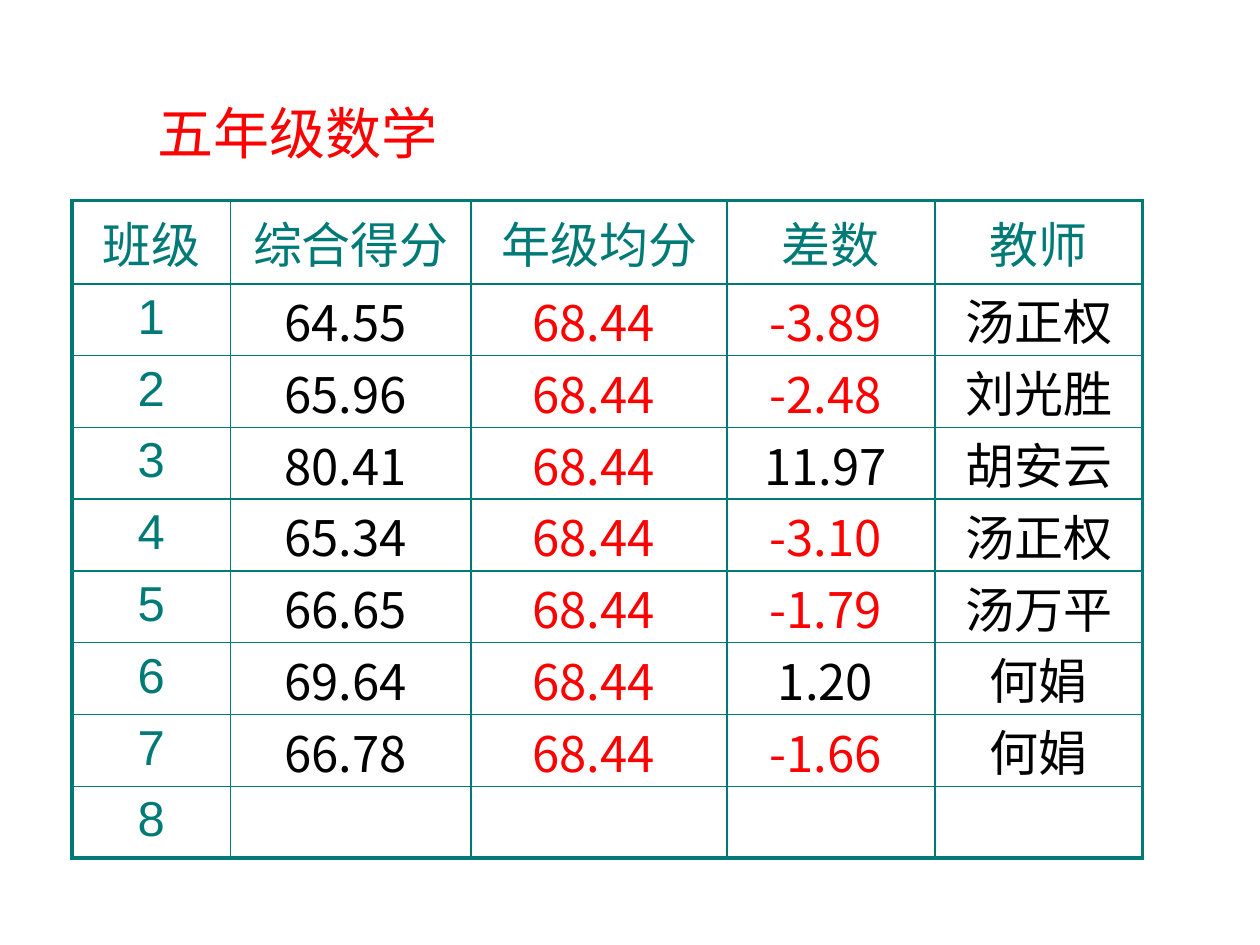
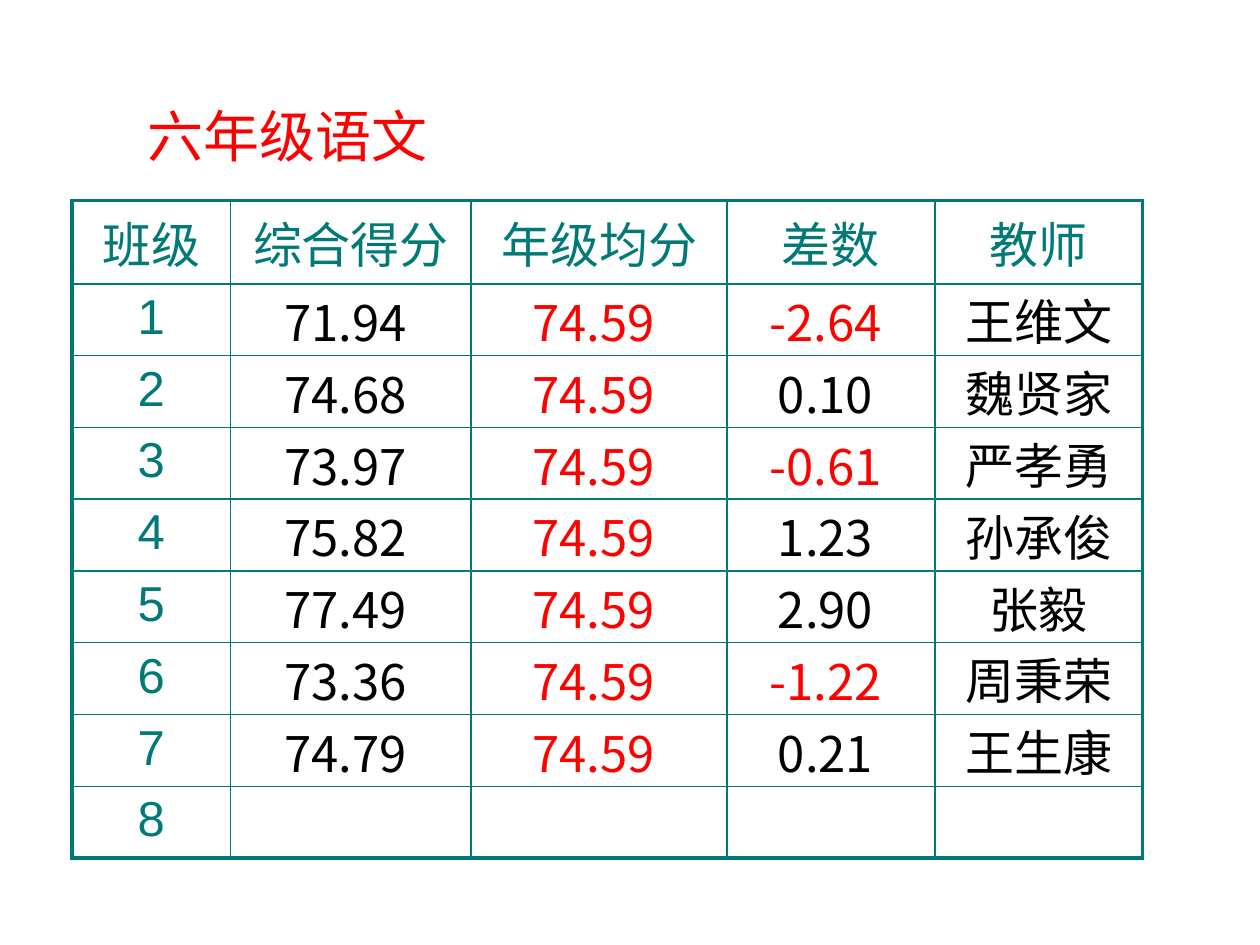
import pptx
import pptx.util
import pptx.dml.color
import pptx.enum.text
import pptx.oxml.ns
from lxml import etree

Inches = pptx.util.Inches
RGBColor = pptx.dml.color.RGBColor
Align = pptx.enum.text.PP_ALIGN
Anchor = pptx.enum.text.MSO_ANCHOR
qn = pptx.oxml.ns.qn

TEAL = RGBColor(0x00, 0x7A, 0x77)
RED = RGBColor(0xFF, 0x00, 0x00)
BLACK = RGBColor(0x00, 0x00, 0x00)
LATIN = "Arial"
HAN = "Noto Sans CJK SC"

HEADS = ["班级", "综合得分", "年级均分", "差数", "教师"]
WIDTHS = [1.26, 1.91, 2.03, 1.65, 1.65]
ROWS = 9
ROW_H = 0.57

# Title, title box, grade mean, then score, difference and teacher by class
GRADES = [
    ("五年级数学", (0.44, 0.73, 3.85, 0.63), "68.44", [
        ("64.55", "-3.89", "汤正权"),
        ("65.96", "-2.48", "刘光胜"),
        ("80.41", "11.97", "胡安云"),
        ("65.34", "-3.10", "汤正权"),
        ("66.65", "-1.79", "汤万平"),
        ("69.64", "1.20", "何娟"),
        ("66.78", "-1.66", "何娟"),
    ]),
    ("六年级语文", (0.43, 0.76, 3.7, 0.63), "74.59", [
        ("71.94", "-2.64", "王维文"),
        ("74.68", "0.10", "魏贤家"),
        ("73.97", "-0.61", "严孝勇"),
        ("75.82", "1.23", "孙承俊"),
        ("77.49", "2.90", "张毅"),
        ("73.36", "-1.22", "周秉荣"),
        ("74.79", "0.21", "王生康"),
    ]),
]


def write(frame, text, size=28, color=TEAL, font=LATIN):
    para = frame.paragraphs[0]
    para.alignment = Align.CENTER
    run = para.add_run()
    run.text = text
    run.font.size = pptx.util.Pt(size)
    run.font.color.rgb = color
    run.font.name = font
    east = etree.SubElement(run.font._element, qn("a:ea"))
    east.set("typeface", HAN)


def edge(cell, side, width):
    """Draw one border of a cell; side is L, R, T or B."""
    line = etree.SubElement(cell._tc.get_or_add_tcPr(), qn(f"a:ln{side}"))
    line.set("w", str(pptx.util.Pt(width)))
    fill = etree.SubElement(line, qn("a:solidFill"))
    etree.SubElement(fill, qn("a:srgbClr")).set("val", str(TEAL))


deck = pptx.Presentation()
deck.slide_width = Inches(10)
deck.slide_height = Inches(7.5)

for name, box, mean, marks in GRADES:
    slide = deck.slides.add_slide(deck.slide_layouts[5])
    title = slide.shapes.title
    title.left, title.top, title.width, title.height = map(Inches, box)
    title.text_frame.vertical_anchor = Anchor.MIDDLE
    title.text_frame.auto_size = pptx.enum.text.MSO_AUTO_SIZE.NONE
    write(title.text_frame, name, size=32, color=RED)

    holder = slide.shapes.add_table(
        ROWS, len(HEADS), Inches(0.57), Inches(1.59),
        Inches(sum(WIDTHS)), Inches(ROWS * ROW_H))
    table = holder.table
    table.first_row = table.horz_banding = False
    for col, width in zip(table.columns, WIDTHS):
        col.width = Inches(width)
    for row in table.rows:
        row.height = Inches(ROW_H)
    holder.height = Inches(6.23)

    for r in range(ROWS):
        for c in range(len(HEADS)):
            cell = table.cell(r, c)
            edge(cell, "L", 2.25 if c == 0 else 1)
            edge(cell, "R", 2.25 if c == len(HEADS) - 1 else 1)
            edge(cell, "T", 2.25 if r == 0 else 1)
            edge(cell, "B", 2.25 if r == ROWS - 1 else 1)
            cell.fill.background()

    for c, head in enumerate(HEADS):
        write(table.cell(0, c).text_frame, head)
    for r in range(1, ROWS):
        write(table.cell(r, 0).text_frame, str(r))

    for r, (score, diff, teacher) in enumerate(marks, start=1):
        # The space after each number sets it slightly left of centre
        entries = [
            (f"{score} ", BLACK, Anchor.BOTTOM),
            (f"{mean} ", RED, Anchor.BOTTOM),
            (f"{diff} ", RED if diff.startswith("-") else BLACK, Anchor.BOTTOM),
            (teacher, BLACK, Anchor.MIDDLE),
        ]
        for c, (text, color, anchor) in enumerate(entries, start=1):
            cell = table.cell(r, c)
            cell.margin_left = cell.margin_right = 0
            cell.margin_top = cell.margin_bottom = 0
            cell.vertical_anchor = anchor
            write(cell.text_frame, text, color=color, font=HAN)

deck.save("out.pptx")
